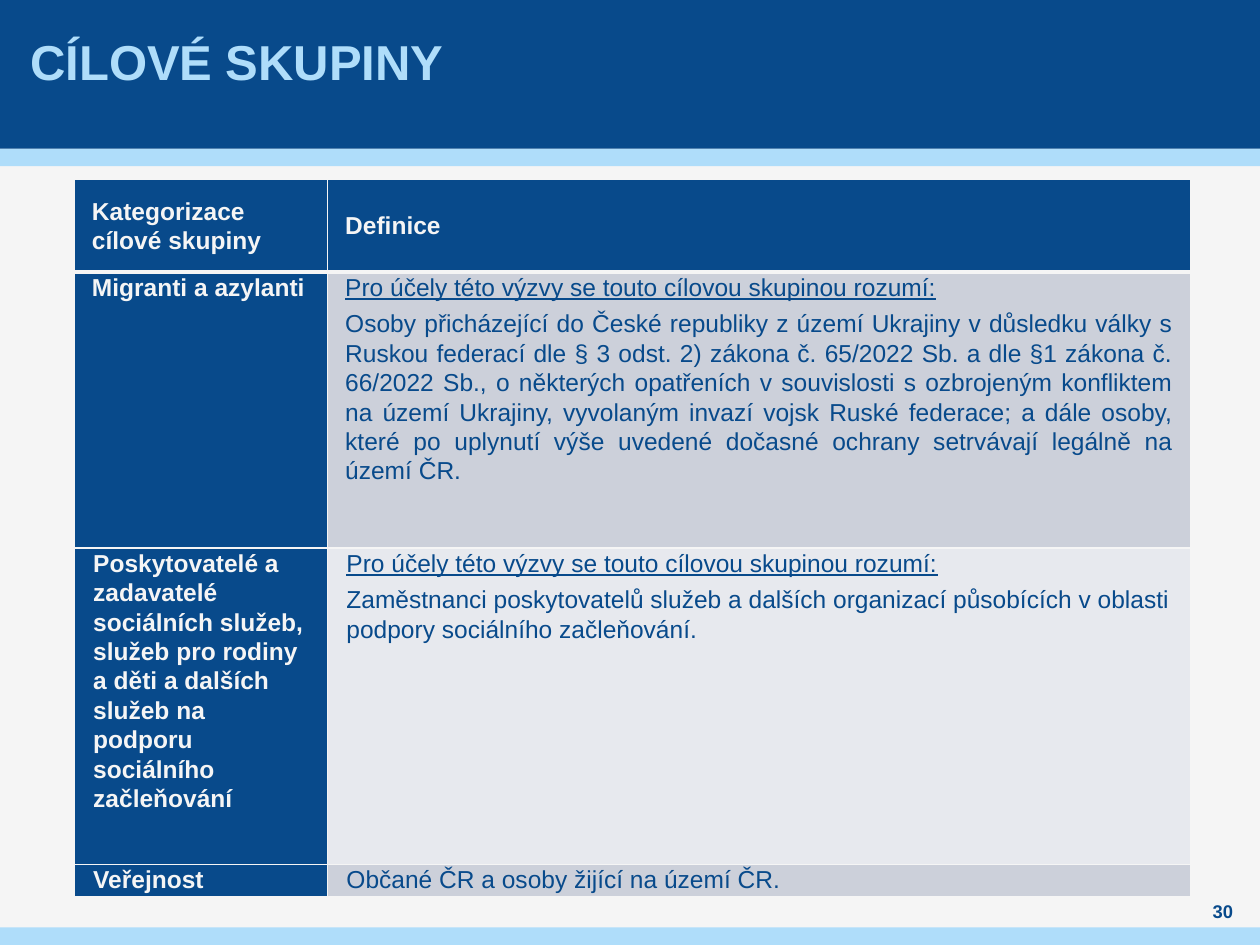
from lxml.etree import SubElement
from pptx import Presentation
from pptx.dml.color import RGBColor
from pptx.enum.shapes import MSO_SHAPE
from pptx.enum.text import MSO_ANCHOR, MSO_AUTO_SIZE, PP_ALIGN
from pptx.oxml.ns import qn
from pptx.util import Inches, Pt

NAVY, SKY, PAPER = "084A8B", "AFDDFA", "F5F5F5"
GREY, PALE = "CCD0DA", "E7E9EE"
WIDTH, HEIGHT = 10, 7.5

COLS = [2.01, 6.85]
ROWS = [0.74, 2.19, 2.51, 0.26]
PURPOSE = "Pro účely této výzvy se touto cílovou skupinou rozumí:"
# Each row: category, definition paragraphs, definition fill, alignment, side inset
GROUPS = [
    ("Kategorizace cílové skupiny", ["Definice"], NAVY, PP_ALIGN.LEFT, 0.06),
    ("Migranti a azylanti", [
        PURPOSE,
        "Osoby přicházející do České republiky z území Ukrajiny v důsledku války "
        "s Ruskou federací dle § 3 odst. 2) zákona č. 65/2022 Sb. a dle §1 zákona "
        "č. 66/2022 Sb., o některých opatřeních v souvislosti s ozbrojeným "
        "konfliktem na území Ukrajiny, vyvolaným invazí vojsk Ruské federace; a dále "
        "osoby, které po uplynutí výše uvedené dočasné ochrany setrvávají legálně na "
        "území ČR."], GREY, PP_ALIGN.JUSTIFY, 0.06),
    ("Poskytovatelé a zadavatelé sociálních služeb, služeb pro rodiny a děti "
     "a dalších služeb na podporu sociálního začleňování", [
         PURPOSE,
         "Zaměstnanci poskytovatelů služeb a dalších organizací působících "
         "v oblasti podpory sociálního začleňování."], PALE, PP_ALIGN.LEFT, 0.07),
    ("Veřejnost", ["Občané ČR a osoby žijící na území ČR."],
     GREY, PP_ALIGN.LEFT, 0.07),
]


def rgb(color):
    return RGBColor.from_string(color)


def add_run(p, text, size, color, bold=False, underline=False):
    r = p.add_run()
    r.text = text
    r.font.name = "Arial"
    r.font.size = Pt(size)
    r.font.bold = bold
    r.font.underline = underline
    r.font.color.rgb = rgb(color)


def set_frame(tf, side):
    tf.word_wrap = True
    tf.auto_size = MSO_AUTO_SIZE.NONE
    tf.vertical_anchor = MSO_ANCHOR.MIDDLE
    tf.margin_left = tf.margin_right = Inches(side)
    tf.margin_top = tf.margin_bottom = 0


def add_band(s, top, height, color):
    sp = s.shapes.add_shape(MSO_SHAPE.RECTANGLE, 0, Inches(top),
                            Inches(WIDTH), Inches(height))
    sp.shadow.inherit = False
    sp.fill.solid()
    sp.fill.fore_color.rgb = rgb(color)
    sp.line.fill.background()


def place_title(s, box, text):
    sp = s.shapes.title
    sp.left, sp.top, sp.width, sp.height = map(Inches, box)
    tf = sp.text_frame
    set_frame(tf, 0.04)
    p = tf.paragraphs[0]
    p.alignment = PP_ALIGN.LEFT
    add_run(p, text, 28, SKY, bold=True)


def add_page_number(s, box, text):
    tf = s.shapes.add_textbox(*map(Inches, box)).text_frame
    set_frame(tf, 0)
    p = tf.paragraphs[0]
    p.alignment = PP_ALIGN.CENTER
    add_run(p, text, 10.5, NAVY, bold=True)


def set_borders(cell, **widths):
    tc_pr = cell._tc.get_or_add_tcPr()
    for side in ("L", "R", "T", "B"):
        ln = SubElement(tc_pr, qn(f"a:ln{side}"), w=str(Pt(widths.get(side, 1))))
        fill = SubElement(ln, qn("a:solidFill"))
        SubElement(fill, qn("a:srgbClr"), val=PAPER)


def fill_cell(cell, paragraphs, fill, color, bold, align, side):
    cell.fill.solid()
    cell.fill.fore_color.rgb = rgb(fill)
    cell.margin_left = cell.margin_right = Inches(side)
    cell.margin_top = cell.margin_bottom = 0
    tf = cell.text_frame
    for i, text in enumerate(paragraphs):
        p = tf.paragraphs[0] if i == 0 else tf.add_paragraph()
        p.alignment = align
        p.line_spacing = 1.07
        p.space_before = p.space_after = Pt(2)
        p_pr = p._p.get_or_add_pPr()
        for margin in ("marL", "marR"):
            p_pr.set(margin, str(Inches(0.08)))
        add_run(p, text, 14, color, bold, underline=text == PURPOSE)


def add_group_table(s, left, top):
    table = s.shapes.add_table(len(ROWS), len(COLS), Inches(left), Inches(top),
                               Inches(sum(COLS)), Inches(sum(ROWS))).table
    for col, width in zip(table.columns, COLS):
        col.width = Inches(width)
    for i, (name, definition, fill, align, side) in enumerate(GROUPS):
        table.rows[i].height = Inches(ROWS[i])
        header = i == 0
        for j in range(len(COLS)):
            cell = table.cell(i, j)
            # Thick rule between the header and the first group
            set_borders(cell, B=3 if header else 1, T=3 if i == 1 else 1)
            cell.vertical_anchor = MSO_ANCHOR.MIDDLE if header else MSO_ANCHOR.TOP
        fill_cell(table.cell(i, 0), [name], NAVY, PAPER, True, PP_ALIGN.LEFT, side)
        fill_cell(table.cell(i, 1), definition, fill,
                  PAPER if header else NAVY, header, align, side)


def main():
    prs = Presentation()
    prs.slide_width, prs.slide_height = Inches(WIDTH), Inches(HEIGHT)
    s = prs.slides.add_slide(prs.slide_layouts[5])
    s.background.fill.solid()
    s.background.fill.fore_color.rgb = rgb(PAPER)

    # Header and footer bands
    band, header = 0.14, 1.18
    add_band(s, header, band, SKY)
    add_band(s, 0, header, NAVY)
    add_band(s, HEIGHT - band, band, SKY)

    # Title, brought in front of the bands
    title = s.shapes.title._element
    title.getparent().append(title)
    place_title(s, (0.2, -0.11, 9.21, header), "CÍLOVÉ SKUPINY")

    # Page number and table
    add_page_number(s, (9.45, 7.13, 0.51, 0.2), "30")
    add_group_table(s, 0.59, 1.42)
    prs.save("out.pptx")


if __name__ == "__main__":
    main()
